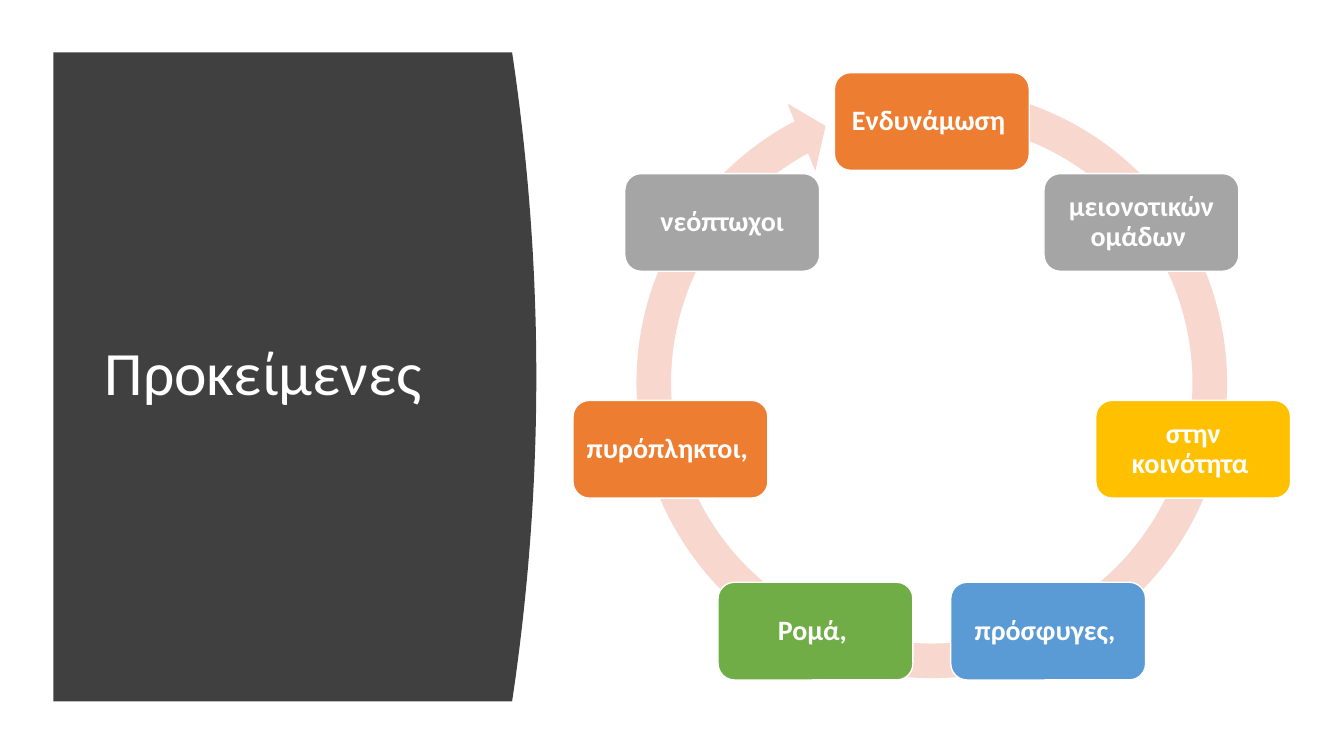
from math import cos, pi, sin

from pptx import Presentation
from pptx.dml.color import RGBColor
from pptx.enum.shapes import MSO_SHAPE
from pptx.enum.text import MSO_ANCHOR, PP_ALIGN
from pptx.util import Pt

COLORS = {
    "panel": "404040",
    "ring": "F8D7CE",
    "white": "FFFFFF",
    "orange": "ED7D31",
    "gray": "A5A5A5",
    "gold": "FFC000",
    "blue": "5B9BD5",
    "green": "70AD47",
}
FONT = "Calibri"

# Clockwise from the top of the ring
STEPS = [
    ("Ενδυνάμωση ", "orange"),
    ("μειονοτικών ομάδων ", "gray"),
    ("στην κοινότητα ", "gold"),
    ("πρόσφυγες, ", "blue"),
    ("Ρομά, ", "green"),
    ("πυρόπληκτοι, ", "orange"),
    ("νεόπτωχοι", "gray"),
]


def rgb(name):
    return RGBColor.from_string(COLORS[name])


def paint(shape, fill, line=None):
    shape.shadow.inherit = False
    shape.fill.solid()
    shape.fill.fore_color.rgb = rgb(fill)
    if line:
        shape.line.color.rgb = rgb(line)
        shape.line.width = Pt(1)
    else:
        shape.line.fill.background()


def write(shape, text, size, bold, align):
    frame = shape.text_frame
    frame.word_wrap = True
    frame.vertical_anchor = MSO_ANCHOR.MIDDLE
    frame.text = text
    paragraph = frame.paragraphs[0]
    paragraph.alignment = align
    paragraph.line_spacing = 0.9
    font = paragraph.runs[0].font
    font.name, font.size, font.bold = FONT, Pt(size), bold
    font.color.rgb = rgb("white")


def add_title_panel(slide, left, top, width, height):
    # Dark panel whose right edge bulges as a parabola
    bulge, pieces = 17.3, 48
    edge = []
    for i in range(pieces + 1):
        t = i / pieces
        x = left + width - bulge * (2 * t - 1) ** 2
        edge.append((Pt(x), Pt(top + height * t)))
    outline = slide.shapes.build_freeform(Pt(left), Pt(top))
    outline.add_line_segments(edge + [(Pt(left), Pt(top + height))], close=True)
    paint(outline.convert_to_shape(), "panel")

    # Title
    title = slide.shapes.add_textbox(
        Pt(left + 29.5), Pt(top + 42.5), Pt(269.3), Pt(377.3))
    write(title, "Προκείμενες", 44, False, PP_ALIGN.LEFT)


def add_cycle(slide, left, top, width, height):
    card_width, card_height, radius, ring_size = 139.2, 69.8, 191.5, 449.3
    center_x = left + width / 2

    # Ring with arrowhead
    ring = slide.shapes.add_shape(
        MSO_SHAPE.CIRCULAR_ARROW, Pt(center_x - ring_size / 2),
        Pt(top + height / 2 - ring_size / 2 + 4.5), Pt(ring_size), Pt(ring_size))
    for i, value in enumerate([0.055, 3.307, 145.218, 169.468, 0.058]):
        ring.adjustments[i] = value
    paint(ring, "ring")

    # Cards at equal angles
    center_y = top + card_height / 2 + radius
    for i, (label, color) in enumerate(STEPS):
        angle = 2 * pi * i / len(STEPS)
        x = center_x + radius * sin(angle) - card_width / 2
        y = center_y - radius * cos(angle) - card_height / 2
        card = slide.shapes.add_shape(
            MSO_SHAPE.ROUNDED_RECTANGLE, Pt(x), Pt(y), Pt(card_width), Pt(card_height))
        paint(card, color, "white")
        frame = card.text_frame
        frame.margin_left = frame.margin_right = Pt(6)
        frame.margin_top = frame.margin_bottom = Pt(6)
        write(card, label, 20, True, PP_ALIGN.CENTER)


def main():
    deck = Presentation()
    deck.slide_width, deck.slide_height = Pt(960), Pt(540)
    slide = deck.slides.add_slide(deck.slide_layouts[6])
    add_title_panel(slide, 38.2, 37.4, 344.9, 463.7)
    add_cycle(slide, 409.2, 51.9, 512.8, 434.2)
    deck.save("out.pptx")


if __name__ == "__main__":
    main()
